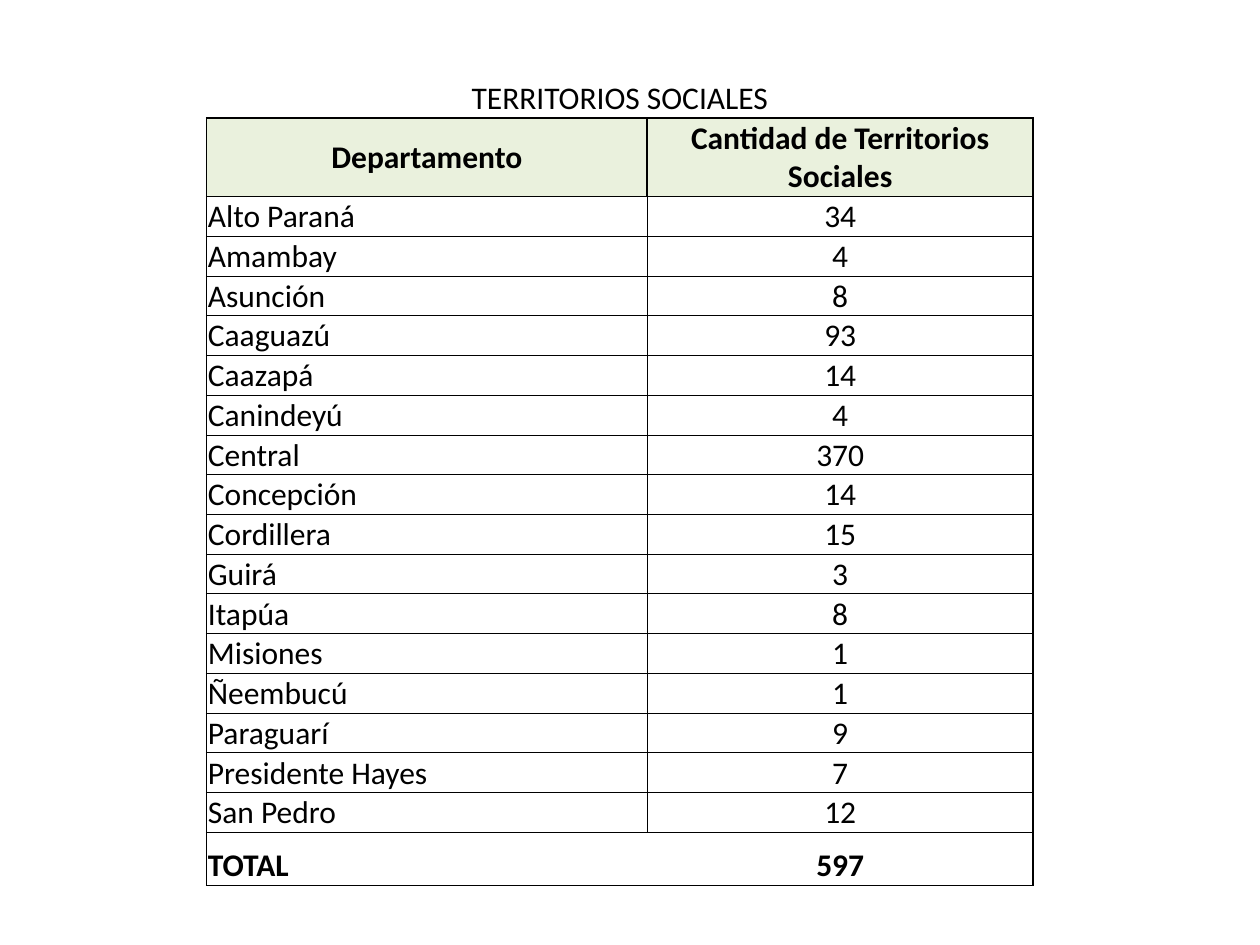
from dataclasses import dataclass

from lxml.etree import SubElement
from pptx import Presentation
from pptx.dml.color import RGBColor
from pptx.enum.text import MSO_ANCHOR as Anchor, PP_ALIGN as Align
from pptx.oxml.ns import qn
from pptx.util import Inches, Pt


@dataclass(frozen=True)
class Theme:
    font: str = "Calibri"
    size: float = 18
    ink: str = "000000"
    header_fill: str = "EAF1DD"
    thick: float = 1
    thin: float = 0.5


THEME = Theme()
SLIDE_W, SLIDE_H = Inches(10), Inches(7.5)

TITLE = "TERRITORIOS SOCIALES"
HEADINGS = ("Departamento", "Cantidad de Territorios Sociales")
TERRITORIES = [
    ("Alto Paraná", 34), ("Amambay", 4), ("Asunción", 8), ("Caaguazú", 93),
    ("Caazapá", 14), ("Canindeyú", 4), ("Central", 370), ("Concepción", 14),
    ("Cordillera", 15), ("Guirá", 3), ("Itapúa", 8), ("Misiones", 1),
    ("Ñeembucú", 1), ("Paraguarí", 9), ("Presidente Hayes", 7), ("San Pedro", 12),
]
TOTAL = ("TOTAL", sum(count for _, count in TERRITORIES))

# Grid: column shares of the table width, row heights in table lines
COLUMN_SHARES = (0.533, 0.467)
ROW_LINES = [1, 2] + [1] * len(TERRITORIES) + [1.35]


def set_borders(cell, left=0, right=0, top=0, bottom=0):
    """Draw each side with its width in points; 0 means no line."""
    properties = cell._tc.get_or_add_tcPr()
    for side, width in zip("LRTB", (left, right, top, bottom)):
        line = SubElement(properties, qn(f"a:ln{side}"), w=str(int(Pt(width))))
        if width:
            fill = SubElement(line, qn("a:solidFill"))
            SubElement(fill, qn("a:srgbClr"), val=THEME.ink)
        else:
            SubElement(line, qn("a:noFill"))


def fill_cell(cell, text, borders, align=Align.CENTER, anchor=Anchor.BOTTOM,
              bold=False, fill=None):
    set_borders(cell, **borders)
    if fill:
        cell.fill.solid()
        cell.fill.fore_color.rgb = RGBColor.from_string(fill)
    else:
        cell.fill.background()
    cell.margin_left = cell.margin_right = cell.margin_top = Inches(0.01)
    cell.margin_bottom = 0
    cell.vertical_anchor = anchor
    cell.text = str(text)
    paragraph = cell.text_frame.paragraphs[0]
    paragraph.alignment = align
    font = paragraph.font
    font.name, font.size, font.bold = THEME.font, Pt(THEME.size), bold
    font.color.rgb = RGBColor.from_string(THEME.ink)


def add_territory_table(slide, left, top, width, height):
    table = slide.shapes.add_table(
        len(ROW_LINES), len(COLUMN_SHARES), left, top, width, height).table
    table.first_row = table.horz_banding = False
    for column, share in zip(table.columns, COLUMN_SHARES):
        column.width = int(width * share)
    for row, lines in zip(table.rows, ROW_LINES):
        row.height = int(height * lines / sum(ROW_LINES))

    thick, thin = THEME.thick, THEME.thin

    # Title across both columns
    for column, text in enumerate((TITLE, "")):
        fill_cell(table.cell(0, column), text, {"bottom": thick})
    table.cell(0, 0).merge(table.cell(0, 1))

    # Column headings
    frame = dict.fromkeys(("left", "right", "top", "bottom"), thick)
    for column, heading in enumerate(HEADINGS):
        fill_cell(table.cell(1, column), heading, frame,
                  anchor=Anchor.MIDDLE, bold=True, fill=THEME.header_fill)

    # Departments: thin inner lines inside a thick frame
    last = len(TERRITORIES) - 1
    for index, (department, count) in enumerate(TERRITORIES):
        edges = {"top": thin if index else thick,
                 "bottom": thick if index == last else thin}
        fill_cell(table.cell(index + 2, 0), department,
                  {"left": thick, "right": thin, **edges}, Align.LEFT, Anchor.TOP)
        fill_cell(table.cell(index + 2, 1), count,
                  {"left": thin, "right": thick, **edges})

    # Total, without a line between its cells
    label, total = TOTAL
    edges = {"top": thick, "bottom": thick}
    total_row = len(ROW_LINES) - 1
    fill_cell(table.cell(total_row, 0), label, {"left": thick, **edges},
              Align.LEFT, bold=True)
    fill_cell(table.cell(total_row, 1), total, {"right": thick, **edges}, bold=True)


def main():
    deck = Presentation()
    deck.slide_width, deck.slide_height = SLIDE_W, SLIDE_H
    slide = deck.slides.add_slide(deck.slide_layouts[6])
    table_width = Inches(6.56)
    add_territory_table(slide, Inches(1.64), Inches(0.62), table_width, Inches(6.35))
    deck.save("out.pptx")


if __name__ == "__main__":
    main()
